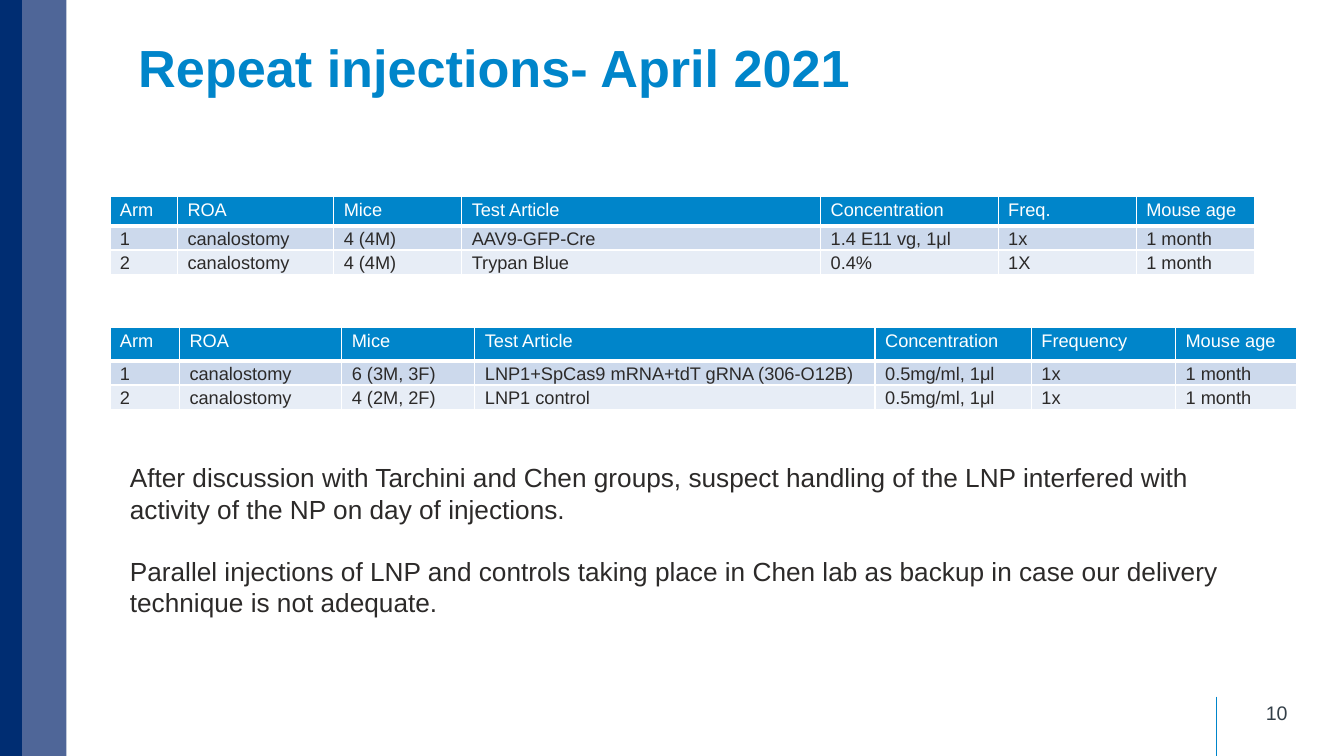
from lxml.etree import SubElement
from pptx import Presentation
from pptx.dml.color import RGBColor
from pptx.enum.shapes import MSO_CONNECTOR, MSO_SHAPE
from pptx.enum.text import MSO_ANCHOR, MSO_AUTO_SIZE, PP_ALIGN
from pptx.oxml import parse_xml
from pptx.oxml.ns import nsdecls, qn
from pptx.util import Inches, Pt

COLORS = {
    "blue": "0085CA", "navy": "002D72", "slate": "4F6698", "white": "FFFFFF",
    "text": "2C2A29", "number": "333F48", "band1": "CCD9EC", "band2": "E7EDF6",
}
TITLE = "Repeat injections- April 2021"
PAGE = "10"
NOTES = [
    "After discussion with Tarchini and Chen groups, suspect handling of the LNP "
    "interfered with activity of the NP on day of injections.",
    "Parallel injections of LNP and controls taking place in Chen lab as backup "
    "in case our delivery technique is not adequate.",
]
TABLES = [
    {
        "top": 1.95, "header_height": 0.29,
        "widths": [0.67, 1.55, 1.27, 3.56, 1.76, 1.37, 1.17],
        "rows": [
            ["Arm", "ROA", "Mice", "Test Article", "Concentration", "Freq.", "Mouse age"],
            ["1", "canalostomy", "4 (4M)", "AAV9-GFP-Cre", "1.4 E11 vg, 1μl", "1x", "1 month"],
            ["2", "canalostomy", "4 (4M)", "Trypan Blue", "0.4%", "1X", "1 month"],
        ],
    },
    {
        "top": 3.25, "header_height": 0.33,
        "widths": [0.69, 1.61, 1.32, 3.97, 1.55, 1.43, 1.2],
        "rows": [
            ["Arm", "ROA", "Mice", "Test Article", "Concentration", "Frequency", "Mouse age"],
            ["1", "canalostomy", "6 (3M, 3F)", "LNP1+SpCas9 mRNA+tdT gRNA (306-O12B)",
             "0.5mg/ml, 1μl", "1x", "1 month"],
            ["2", "canalostomy", "4 (2M, 2F)", "LNP1 control", "0.5mg/ml, 1μl", "1x", "1 month"],
        ],
    },
]
TABLE_LEFT, ROW_HEIGHT = 1.09, 0.24
STRIPES = [(0, 0.22, "navy"), (0.22, 0.44, "slate")]


def rgb(name):
    return RGBColor.from_string(COLORS[name])


def write(tf, paragraphs, size, color, bold=False, align=PP_ALIGN.LEFT,
          spacing=None, gap=0):
    for i, text in enumerate(paragraphs):
        p = tf.paragraphs[0] if i == 0 else tf.add_paragraph()
        p.alignment = align
        if spacing:
            p.line_spacing = spacing
        if i:
            p.space_before = Pt(gap)
        r = p.add_run()
        r.text = text
        r.font.name, r.font.size, r.font.bold = "Arial", Pt(size), bold
        r.font.color.rgb = rgb(color)


def add_text(s, box, paragraphs, anchor=MSO_ANCHOR.TOP, **fmt):
    tf = s.shapes.add_textbox(*map(Inches, box)).text_frame
    tf.word_wrap = True
    tf.vertical_anchor = anchor
    write(tf, paragraphs, **fmt)


def set_borders(cell, **widths):
    """Draw white borders; widths in points are keyed L, R, T, B."""
    tc_pr = cell._tc.get_or_add_tcPr()
    for i, side in enumerate("LRTB"):
        tc_pr.insert(i, parse_xml(
            f'<a:ln{side} {nsdecls("a")} w="{Pt(widths.get(side, 1))}"><a:solidFill>'
            f'<a:srgbClr val="{COLORS["white"]}"/></a:solidFill></a:ln{side}>'))


def add_arms_table(s, top, header_height, widths, rows):
    heights = [header_height] + [ROW_HEIGHT] * (len(rows) - 1)
    table = s.shapes.add_table(
        len(rows), len(widths), Inches(TABLE_LEFT), Inches(top),
        Inches(sum(widths)), Inches(sum(heights))).table
    for column, width in zip(table.columns, widths):
        column.width = Inches(width)
    for i, (row, height, values) in enumerate(zip(table.rows, heights, rows)):
        row.height = Inches(height)
        for cell, value in zip(row.cells, values):
            cell.margin_top = cell.margin_bottom = 0
            cell.fill.solid()
            cell.fill.fore_color.rgb = rgb(("blue", "band1", "band2")[i])
            set_borders(cell, T=3 if i == 1 else 1, B=3 if i == 0 else 1)
            write(cell.text_frame, [value], size=13,
                  color="text" if i else "white", spacing=1.15)


def main():
    prs = Presentation()
    prs.slide_width, prs.slide_height = Inches(13.33), Inches(7.5)
    s = prs.slides.add_slide(prs.slide_layouts[5])

    for left, width, color in STRIPES:
        sp = s.shapes.add_shape(MSO_SHAPE.RECTANGLE, Inches(left), 0,
                                Inches(width), prs.slide_height)
        sp.shadow.inherit = False
        sp.fill.solid()
        sp.fill.fore_color.rgb = rgb(color)
        sp.line.fill.background()

    rule = s.shapes.add_connector(MSO_CONNECTOR.STRAIGHT, Inches(12.06), Inches(6.91),
                                  Inches(12.06), Inches(7.5))
    rule.line.color.rgb = rgb("blue")
    rule.line.width = Pt(0.25)
    SubElement(rule._element.spPr, qn("a:effectLst"))

    title = s.shapes.title
    title.left, title.top, title.width, title.height = map(Inches, (1.37, 0.3, 11.5, 1.25))
    tf = title.text_frame
    tf.auto_size = MSO_AUTO_SIZE.NONE
    tf.vertical_anchor = MSO_ANCHOR.TOP
    tf.margin_left = 0
    write(tf, [TITLE], size=37.3, color="blue", bold=True)

    for table in TABLES:
        add_arms_table(s, **table)
    add_text(s, (1.19, 4.53, 11.16, 1.99), NOTES, size=18.7, color="text", gap=22)
    add_text(s, (9.76, 6.87, 3.11, 0.4), [PAGE], anchor=MSO_ANCHOR.MIDDLE,
             size=14, color="number", align=PP_ALIGN.RIGHT)
    prs.save("out.pptx")


if __name__ == "__main__":
    main()
